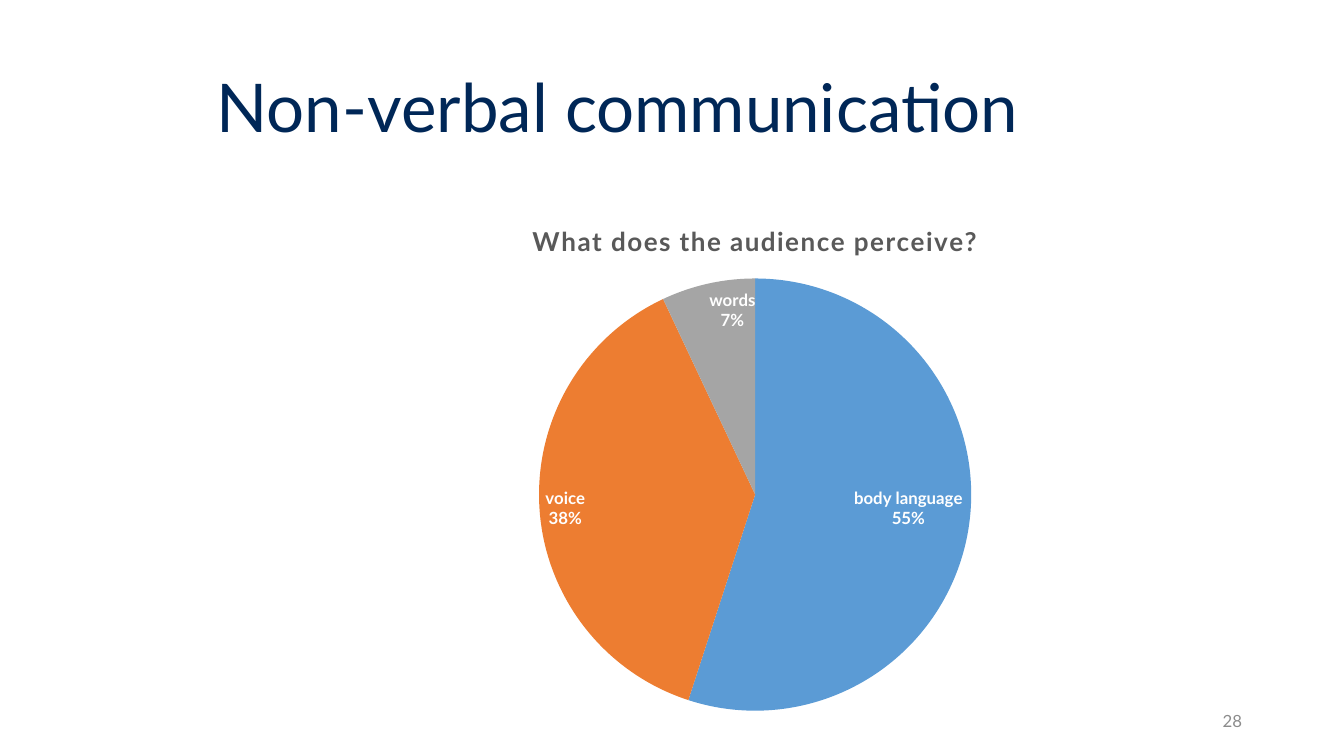
import lxml.etree
import pptx
import pptx.chart.data
import pptx.dml.color
import pptx.enum.chart
import pptx.enum.text
import pptx.oxml.ns
import pptx.util
from pptx.util import Cm

FONT = "Lato"
PERCEPTION = {
    "body language": (55, "5B9BD5"),
    "voice": (38, "ED7D31"),
    "words": (7, "A5A5A5"),
}


def color(hex_value):
    return pptx.dml.color.RGBColor.from_string(hex_value)


def format_font(font, size, hex_value, bold=False):
    values = {"name": FONT, "size": pptx.util.Pt(size), "bold": bold}
    for name, value in values.items():
        setattr(font, name, value)
    font.color.rgb = color(hex_value)


def add_text(page, place, text, size, hex_value, **para_format):
    box = page.shapes.add_textbox(*place)
    frame = box.text_frame
    frame.word_wrap = True
    frame.vertical_anchor = pptx.enum.text.MSO_ANCHOR.MIDDLE
    para = frame.paragraphs[0]
    for name, value in para_format.items():
        setattr(para, name, value)
    span = para.add_run()
    span.text = text
    format_font(span.font, size, hex_value)


def format_chart_title(chart, text):
    chart.has_title = True
    para = chart.chart_title.text_frame.paragraphs[0]
    span = para.add_run()
    span.text = text
    format_font(span.font, 18.6, "595959", bold=True)
    span.font._element.set("spc", "100")
    chart.chart_title.include_in_layout = False


def format_labels(labels):
    """Show category above percentage inside the outer edge of each slice."""
    values = {
        "show_category_name": True,
        "show_percentage": True,
        "show_value": False,
        "number_format": "0%",
        "number_format_is_linked": False,
        "position": pptx.enum.chart.XL_LABEL_POSITION.INSIDE_END,
    }
    for name, value in values.items():
        setattr(labels, name, value)
    format_font(labels.font, 12, "FFFFFF", bold=True)
    separator = lxml.etree.Element(pptx.oxml.ns.qn("c:separator"))
    separator.text = "\n"
    labels._element.find(pptx.oxml.ns.qn("c:showBubbleSize")).addnext(separator)


def add_pie(page, place, title, slices):
    data = pptx.chart.data.CategoryChartData()
    data.categories = list(slices)
    data.add_series(title, [value for value, _ in slices.values()])
    kind = pptx.enum.chart.XL_CHART_TYPE.PIE
    chart = page.shapes.add_chart(kind, *place, data).chart
    format_font(chart.font, 10, "000000")
    chart.has_legend = False
    format_chart_title(chart, title)
    plot = chart.plots[0]
    plot.vary_by_categories = True
    series = plot.series[0]
    for index, (_, hex_value) in enumerate(slices.values()):
        fill = series.points[index].format.fill
        fill.solid()
        fill.fore_color.rgb = color(hex_value)
    format_labels(series.data_labels)


def main():
    deck = pptx.Presentation()
    deck.slide_width, deck.slide_height = Cm(33.87), Cm(19.05)
    page = deck.slides.add_slide(deck.slide_layouts[6])
    add_text(page, (Cm(5.21), Cm(1.02), Cm(27.64), Cm(3.56)),
             "Non-verbal communication", 48, "002757", line_spacing=0.9)
    add_pie(page, (Cm(5.21), Cm(5.08), Cm(27.64), Cm(13.18)),
            "What does the audience perceive?", PERCEPTION)
    add_text(page, (Cm(23.93), Cm(17.65), Cm(7.62), Cm(1.02)),
             "28", 12, "8C8C8C", alignment=pptx.enum.text.PP_ALIGN.RIGHT)
    deck.save("out.pptx")


if __name__ == "__main__":
    main()
